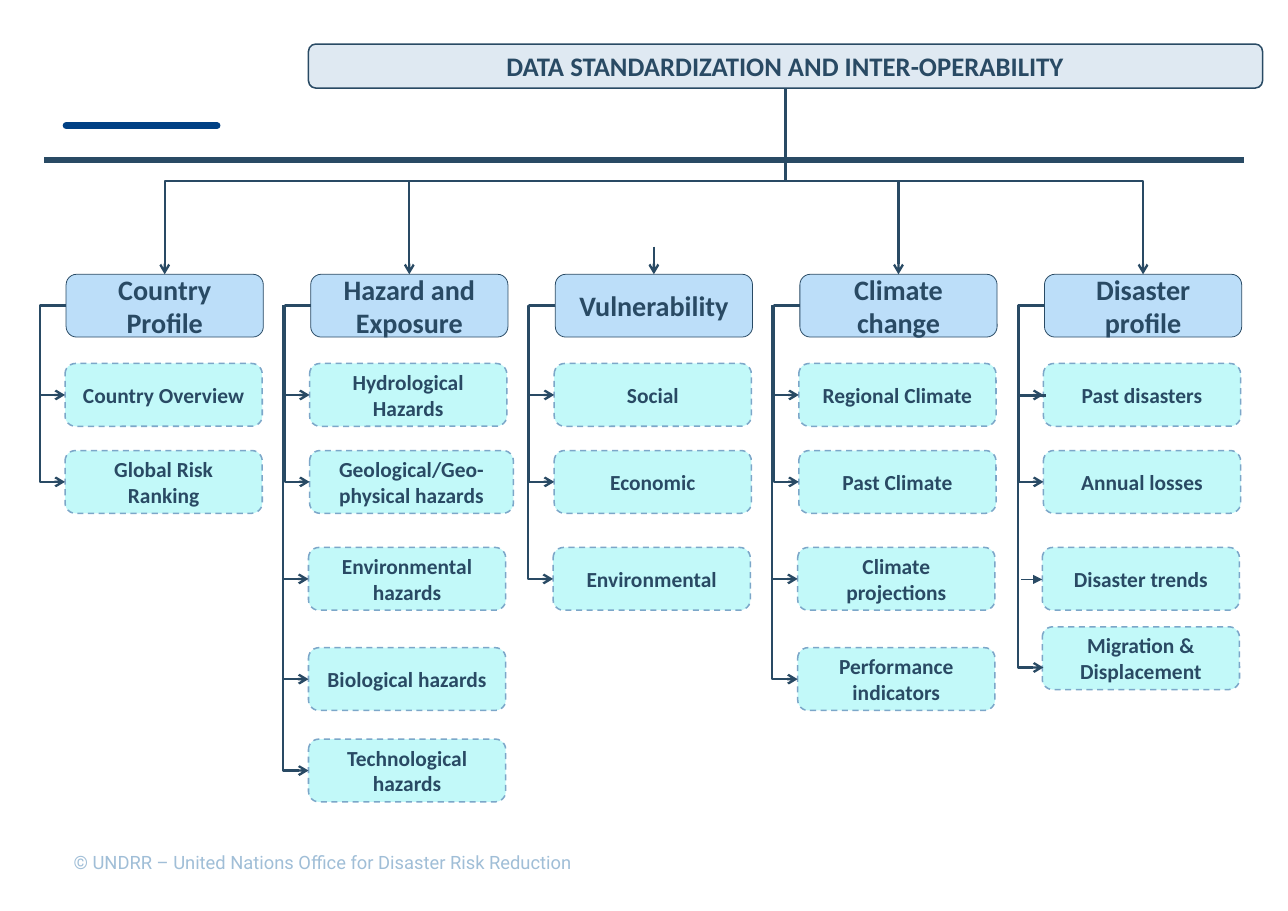
from pptx import Presentation
from pptx.dml.color import RGBColor
from pptx.enum import dml, shapes, text
from pptx.oxml.ns import qn
from pptx.util import Inches, Pt
from lxml import etree

# Content
TITLE = "DATA STANDARDIZATION AND INTER-OPERABILITY"
FOOTER = "© UNDRR – United Nations Office for Disaster Risk Reduction"
COLUMNS = [
    ("Country Profile", ["Country Overview", "Global Risk Ranking"]),
    ("Hazard and Exposure", [
        "Hydrological Hazards", "Geological/Geo-physical hazards",
        "Environmental hazards", "Biological hazards", "Technological hazards"]),
    ("Vulnerability", ["Social", "Economic", "Environmental"]),
    ("Climate change", ["Regional Climate", "Past Climate",
                        "Climate projections", "Performance indicators"]),
    ("Disaster profile", ["Past disasters", "Annual losses",
                          "Disaster trends", "Migration & Displacement"]),
]
WIDE = "Geological/Geo-physical hazards"
RAISED = "Migration & Displacement"
UNLINKED = ("Disaster trends", RAISED)

# Layout in inches
LEFT, PITCH, BOX_W, BOX_H = 0.6, 2.22, 1.79, 0.57
HEAD_Y = 2.49
ROWS = [3.3, 4.09, 4.97, 5.88, 6.71]
SHIFTS = [0.01, 0.01, 0.02, 0.02, 0.02]
TRUNK_GAP = 0.24

# Colours and box styles
NAVY = RGBColor(0x29, 0x4A, 0x64)
ACCENT = RGBColor(0x00, 0x40, 0x84)
PALE = RGBColor(0xDF, 0xE9, 0xF2)
BLUE = RGBColor(0xBC, 0xDE, 0xF9)
AQUA = RGBColor(0xC2, 0xF9, 0xF9)
STEEL = RGBColor(0x7C, 0xA7, 0xC9)
FOOT = RGBColor(0xA0, 0xBE, 0xD7)
TOP_STYLE = dict(fill=PALE, line=NAVY, width=1, size=17.5)
HEAD_STYLE = dict(fill=BLUE, line=NAVY, width=0.5, size=18.4)
ITEM_STYLE = dict(fill=AQUA, line=STEEL, width=1, size=14, dash=True)

prs = Presentation()
prs.slide_width, prs.slide_height = Inches(11.69), Inches(8.27)
s = prs.slides.add_slide(prs.slide_layouts[6])


def write(tf, words, **font):
    r = tf.paragraphs[0].add_run()
    r.text = words
    color = font.pop("color")
    for name, value in font.items():
        setattr(r.font, name, value)
    r.font.color.rgb = color


def box(words, x, y, w, h, style):
    sp = s.shapes.add_shape(shapes.MSO_SHAPE.ROUNDED_RECTANGLE,
                            *map(Inches, (x, y, w, h)))
    sp.shadow.inherit = False
    sp.fill.solid()
    sp.fill.fore_color.rgb = style["fill"]
    sp.line.color.rgb = style["line"]
    sp.line.width = Pt(style["width"])
    if style.get("dash"):
        sp.line.dash_style = dml.MSO_LINE.DASH
    tf = sp.text_frame
    tf.word_wrap = True
    tf.vertical_anchor = text.MSO_ANCHOR.MIDDLE
    tf.paragraphs[0].alignment = text.PP_ALIGN.CENTER
    write(tf, words, name="Calibri", size=Pt(style["size"]), bold=True, color=NAVY)
    return sp


def connect(kind, x1, y1, x2, y2, color=NAVY, width=1.5, arrow=None, cap=None):
    c = s.shapes.add_connector(kind, *map(Inches, (x1, y1, x2, y2)))
    c.line.color.rgb = color
    c.line.width = Pt(width)
    ln = c.line._get_or_add_ln()
    if cap:
        ln.set("cap", cap)
    if arrow:
        etree.SubElement(ln, qn("a:tailEnd"), type=arrow)
    etree.SubElement(c._element.spPr, qn("a:effectLst"))
    return c


def straight(*ends, **style):
    return connect(shapes.MSO_CONNECTOR.STRAIGHT, *ends, **style)


def elbow(*ends, glue=None):
    c = connect(shapes.MSO_CONNECTOR.ELBOW, *ends, arrow="arrow")
    if glue:
        start, start_site, end, end_site = glue
        c.begin_connect(start, start_site)
        c.end_connect(end, end_site)
    return c


def turn(c, rot, flip=None):
    xfrm = c._element.spPr.find(qn("a:xfrm"))
    for name in ("flipH", "flipV"):
        xfrm.attrib.pop(name, None)
    xfrm.set("rot", str(rot * 60000))
    if flip:
        xfrm.set(flip, "1")


def side_elbow(*ends, glue=None):
    """Leave to the left, run down the trunk, then point right."""
    c = elbow(*ends, glue=glue)
    adj = round((c.width + Inches(TRUNK_GAP - 0.01)) / c.width * 100000)
    turn(c, 180, "flipV")
    guides = c._element.spPr.find(qn("a:prstGeom")).find(qn("a:avLst"))
    etree.SubElement(guides, qn("a:gd"), name="adj1", fmla=f"val {adj}")


def down_elbow(*ends, glue):
    """Leave downwards, run across, then point down."""
    c = elbow(*ends, glue=glue)
    rightward = c.end_x > c.begin_x
    mid_x, mid_y = c.left + c.width // 2, c.top + c.height // 2
    c.width, c.height = c.height, c.width
    c.left, c.top = mid_x - c.width // 2, mid_y - c.height // 2
    turn(c, *((270, "flipH") if rightward else (90,)))


# Accent strokes and footer
for x in (0.64, 0.6):
    straight(x, 1.14, x + 1.33, 1.14, color=ACCENT, width=4.5, cap="rnd")
tf = s.shapes.add_textbox(*map(Inches, (0.57, 7.68, 10.3, 0.3))).text_frame
tf.word_wrap = True
write(tf, FOOTER, name="Roboto", size=Pt(12), color=FOOT)

# Boxes
top = box(TITLE, 2.8, 0.4, 8.66, 0.4, TOP_STYLE)
tree = []
for i, (heading, items) in enumerate(COLUMNS):
    x = LEFT + i * PITCH
    head = box(heading, x, HEAD_Y, BOX_W, BOX_H, HEAD_STYLE)
    children = []
    for item, y, shift in zip(items, ROWS, SHIFTS):
        y = 5.69 if item == RAISED else y
        w = 1.85 if item == WIDE else BOX_W
        children.append((item, x - shift, y + BOX_H / 2,
                         box(item, x - shift, y, w, BOX_H, ITEM_STYLE)))
    tree.append((heading, x, head, children))

# Links from headings to items, and from the title to headings
for heading, x, head, children in tree:
    for item, item_x, mid_y, sp in children:
        if item not in UNLINKED:
            side_elbow(x, HEAD_Y + BOX_H / 2, item_x, mid_y, glue=(head, 1, sp, 1))
    mid_x = x + BOX_W / 2
    if heading == "Vulnerability":
        straight(mid_x, 2.24, mid_x, HEAD_Y, arrow="arrow")
    else:
        down_elbow(7.13, 0.8, mid_x, HEAD_Y, glue=(top, 2, head, 0))

# Separate arrows in the last column and the dividing rule
side_elbow(9.49, 3.59, 9.47, 6.06)
straight(9.27, 5.26, 9.46, 5.26, width=1, arrow="triangle")
straight(0.4, 1.45, 11.29, 1.45, width=4)

prs.save("out.pptx")
